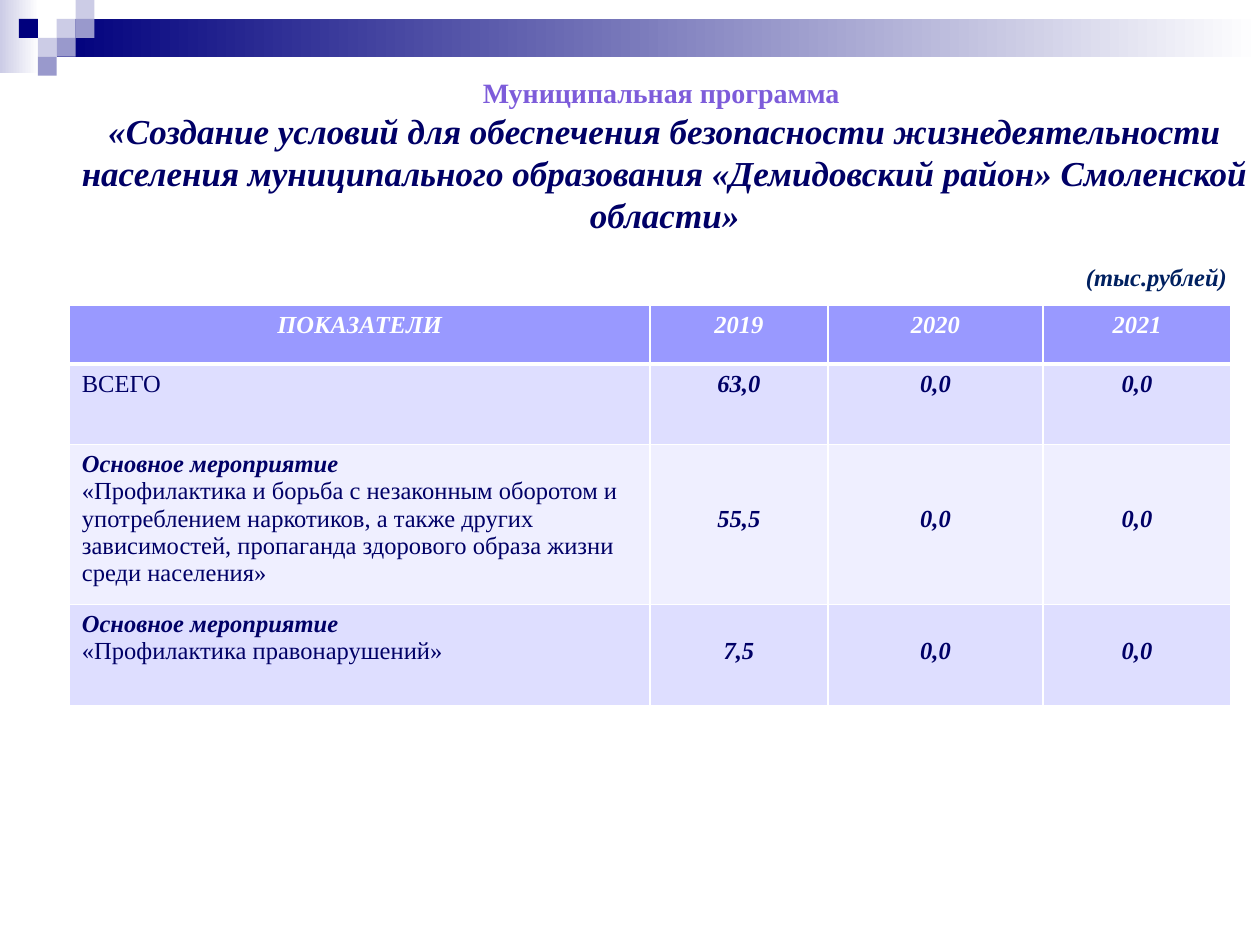
from lxml import etree
from pptx import Presentation, util as u
from pptx.dml.color import RGBColor
from pptx.enum import shapes, text
from pptx.oxml.ns import qn

NAVY = RGBColor(0x00, 0x00, 0x7D)
INK = RGBColor(0x00, 0x00, 0x66)
TEAL = RGBColor(0x00, 0x20, 0x60)
VIOLET = RGBColor(0x7D, 0x5C, 0xDA)
PALE = RGBColor(0xCC, 0xCC, 0xE6)
MID = RGBColor(0x99, 0x99, 0xCC)
WHITE = RGBColor(0xFF, 0xFF, 0xFF)
HEAD = RGBColor(0x99, 0x99, 0xFF)
BANDS = [RGBColor(0xDE, 0xDE, 0xFF), RGBColor(0xEF, 0xEF, 0xFF)]

FONT = "Times New Roman"
CENTER = text.PP_ALIGN.CENTER
STRONG = dict(size=u.Pt(14), bold=True, italic=True)
PLAIN = dict(size=u.Pt(14), bold=False, italic=False)
LINE = 0.215  # height of one 14 pt line, inches

STEP = 0.15
TILES = [(3, 1, PALE), (4, 0, PALE), (4, 1, MID), (2, 2, PALE),
         (1, 1, NAVY), (3, 2, MID), (2, 3, MID)]

COLS = [4.61, 1.41, 1.71, 1.49]
ROWS = [0.47, 0.64, 1.27, 0.8]
YEARS = ["2019", "2020", "2021"]
TASK = "Основное мероприятие"
# label lines, values, lines by which the values are lowered
DATA = [
    ([("ВСЕГО", PLAIN)], ["63,0", "0,0", "0,0"], 0),
    ([(TASK, STRONG),
      ("«Профилактика и борьба с незаконным оборотом и употреблением "
       "наркотиков, а также других зависимостей, пропаганда здорового "
       "образа жизни среди населения»", PLAIN)], ["55,5", "0,0", "0,0"], 2),
    ([(TASK, STRONG), ("«Профилактика правонарушений»", PLAIN)],
     ["7,5", "0,0", "0,0"], 1),
]


def write(frame, lines, align=None):
    """Fill a text frame with one paragraph per (words, format) pair."""
    for i, (words, form) in enumerate(lines):
        para = frame.add_paragraph() if i else frame.paragraphs[0]
        para.alignment = align
        run = para.add_run()
        run.text = words
        run.font.name = FONT
        for key, val in form.items():
            if key == "color":
                run.font.color.rgb = val
            else:
                setattr(run.font, key, val)


def add_rect(slide, box, *colors):
    """Draw a borderless box: one colour is solid, two are a gradient."""
    rect = slide.shapes.add_shape(shapes.MSO_SHAPE.RECTANGLE,
                                  *map(u.Inches, box))
    rect.shadow.inherit = False
    rect.line.fill.background()
    if len(colors) == 1:
        rect.fill.solid()
        rect.fill.fore_color.rgb = colors[0]
        return
    rect.fill.gradient()
    rect.fill.gradient_angle = 0
    for stop, pos, color in zip(rect.fill.gradient_stops, (0, 1), colors):
        stop.position = pos
        stop.color.rgb = color


def add_banner(slide, left, top, width):
    add_rect(slide, (left, top, 0.31, 0.58), PALE, WHITE)
    add_rect(slide, (left + 3 * STEP, top + STEP, width - 3 * STEP, 2 * STEP),
             NAVY, WHITE)
    for col, row, color in TILES:
        add_rect(slide, (left + col * STEP, top + row * STEP, STEP, STEP),
                 color)


def add_text(slide, box, lines, align=None, wrap=True):
    frame = slide.shapes.add_textbox(*map(u.Inches, box)).text_frame
    frame.word_wrap = wrap
    write(frame, lines, align)


def add_edges(cell, **widths):
    """Give a cell white borders; widths are in points by side."""
    props = cell._tc.get_or_add_tcPr()
    for side in "LRTB":
        edge = etree.SubElement(props, qn("a:ln" + side),
                                w=str(u.Pt(widths.get(side, 1))))
        fill = etree.SubElement(edge, qn("a:solidFill"))
        etree.SubElement(fill, qn("a:srgbClr"), val=str(WHITE))


def set_cell(cell, lines, color, fill, align=None, drop=0, **widths):
    add_edges(cell, **widths)
    cell.fill.solid()
    cell.fill.fore_color.rgb = fill
    cell.margin_top = u.Inches(0.05 + drop * LINE)
    write(cell.text_frame,
          [(words, dict(form, color=color)) for words, form in lines], align)


def add_budget(slide, left, top):
    box = (left, top, sum(COLS), sum(ROWS))
    table = slide.shapes.add_table(len(ROWS), len(COLS),
                                   *map(u.Inches, box)).table
    for col, width in zip(table.columns, COLS):
        col.width = u.Inches(width)
    for row, height in zip(table.rows, ROWS):
        row.height = u.Inches(height)
    for c, name in enumerate(["ПОКАЗАТЕЛИ"] + YEARS):
        set_cell(table.cell(0, c), [(name, STRONG)], WHITE, HEAD, CENTER, B=3)
    for r, (label, values, drop) in enumerate(DATA, 1):
        fill = BANDS[(r - 1) % 2]
        rim = 3 if r == 1 else 1
        set_cell(table.cell(r, 0), label, INK, fill, T=rim)
        for c, value in enumerate(values, 1):
            set_cell(table.cell(r, c), [(value, STRONG)], INK, fill, CENTER,
                     drop, T=rim)


def main():
    deck = Presentation()
    deck.slide_width, deck.slide_height = u.Inches(10), u.Inches(7.5)
    slide = deck.slides.add_slide(deck.slide_layouts[6])
    add_banner(slide, 0, 0, 10)
    add_text(slide, (0.55, 0.55, 9.45, 1.38), [
        ("Муниципальная программа ",
         dict(size=u.Pt(16), bold=True, color=VIOLET)),
        ("«Создание условий для обеспечения безопасности жизнедеятельности "
         "населения муниципального образования «Демидовский район» "
         "Смоленской области»", dict(STRONG, size=u.Pt(20), color=INK)),
    ], CENTER)
    add_budget(slide, 0.55, 2.42)
    add_text(slide, (8.52, 2.03, 1.33, 0.34),
             [("(тыс.рублей)", dict(STRONG, color=TEAL))], wrap=False)
    deck.save("out.pptx")


if __name__ == "__main__":
    main()
